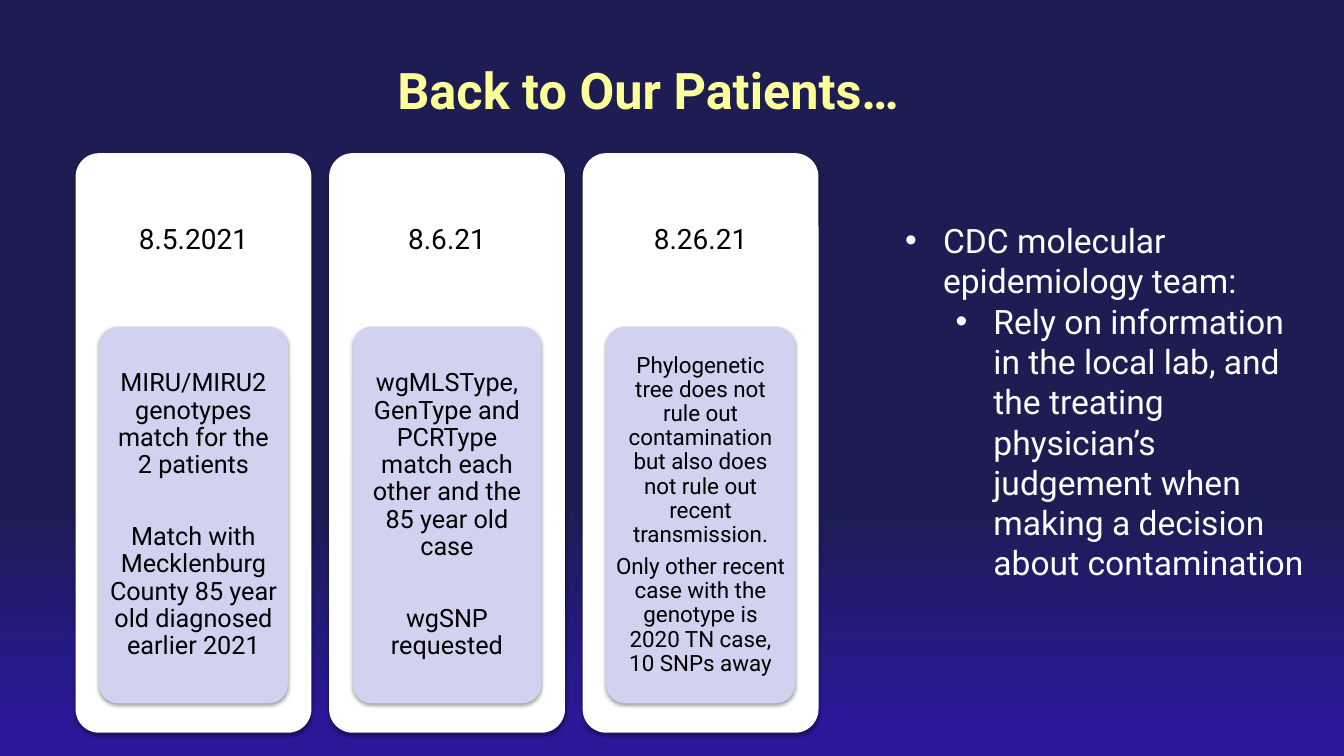
from lxml.etree import SubElement
from pptx import Presentation
from pptx.dml.color import RGBColor
from pptx.enum.shapes import MSO_SHAPE
from pptx.enum.text import MSO_ANCHOR, MSO_AUTO_SIZE, PP_ALIGN
from pptx.oxml.ns import qn
from pptx.util import Pt

NAVY = RGBColor(0x1D, 0x1D, 0x53)
VIOLET = RGBColor(0x2A, 0x18, 0x98)
YELLOW = RGBColor(0xFF, 0xFF, 0x99)
WHITE = RGBColor(0xFF, 0xFF, 0xFF)
LILAC = RGBColor(0xD1, 0xD1, 0xF0)
BLACK = RGBColor(0, 0, 0)
FONT = "Roboto"


def add_run(para, text, size, color, bold=False):
    run = para.add_run()
    run.text = text
    run.font.name = FONT
    run.font.size = Pt(size)
    run.font.bold = bold
    run.font.color.rgb = color


def add_card(left, top, width, height, fill, margins, texts, size, gap):
    card = slide.shapes.add_shape(MSO_SHAPE.ROUNDED_RECTANGLE, Pt(left), Pt(top), Pt(width), Pt(height))
    card.adjustments[0] = 0.1
    card.fill.solid()
    card.fill.fore_color.rgb = fill
    card.line.fill.background()

    # Soft shadow below the card
    card.shadow.inherit = False
    effects = card._element.spPr.find(qn("a:effectLst"))
    shade = SubElement(effects, qn("a:outerShdw"), blurRad=str(Pt(3.1)), dist=str(Pt(1.6)),
                       dir="5400000", rotWithShape="0")
    tint = SubElement(shade, qn("a:srgbClr"), val=str(BLACK))
    SubElement(tint, qn("a:alpha"), val="38000")

    # Centred text
    frame = card.text_frame
    frame.word_wrap = True
    frame.vertical_anchor = MSO_ANCHOR.MIDDLE
    side, upper, lower = margins
    frame.margin_left = frame.margin_right = Pt(side)
    frame.margin_top, frame.margin_bottom = Pt(upper), Pt(lower)
    for i, text in enumerate(texts):
        para = frame.add_paragraph() if i else frame.paragraphs[0]
        para.alignment = PP_ALIGN.CENTER
        para.line_spacing = 0.9
        para.space_before = Pt(gap if i else 0)
        add_run(para, text, size, BLACK)


deck = Presentation()
deck.slide_width, deck.slide_height = Pt(960), Pt(540)
slide = deck.slides.add_slide(deck.slide_layouts[1])

# Background
back = slide.background.fill
back.gradient()
back.gradient_angle = 270
for stop, place, color in zip(back.gradient_stops, (0.67, 0.95), (NAVY, VIOLET)):
    stop.position = place
    stop.color.rgb = color

# Title
title = slide.shapes.title
title.left, title.top, title.width, title.height = Pt(54), Pt(23), Pt(818), Pt(66)
title.text_frame.vertical_anchor = MSO_ANCHOR.BOTTOM
head = title.text_frame.paragraphs[0]
head.alignment = PP_ALIGN.CENTER
add_run(head, "Back to Our Patients…", 36, YELLOW, True)

# Dated cards: date, findings, text size, paragraph gap
cards = [
    ("8.5.2021", ["MIRU/MIRU2 genotypes match for the 2 patients",
                  "Match with Mecklenburg County 85 year old diagnosed earlier 2021"], 18, 32),
    ("8.6.21", ["wgMLSType, GenType and PCRType match each other and the 85 year old case",
                "wgSNP requested"], 18, 32),
    ("8.26.21", ["Phylogenetic tree does not rule out contamination but also does not "
                 "rule out recent transmission.",
                 "Only other recent case with the genotype is 2020 TN case, 10 SNPs away"], 16, 5.6),
]
for i, (date, notes, size, gap) in enumerate(cards):
    left = 54 + 181.1 * i
    add_card(left, 109.4, 168.5, 414, WHITE, (1, 1, 290), [date], 20, 0)
    add_card(left + 16.8, 233.4, 134.8, 269, LILAC, (3, 3, 3), notes, size, gap)

# Bulleted list
body = slide.placeholders[1]
body.left, body.top, body.width, body.height = Pt(639.4), Pt(153.4), Pt(300.2), Pt(327)
frame = body.text_frame
frame.auto_size = MSO_AUTO_SIZE.NONE
points = [
    ("CDC molecular epidemiology team:", 27),
    ("Rely on information in the local lab, and the treating physician’s judgement "
     "when making a decision about contamination", 63),
]
for level, (text, indent) in enumerate(points):
    para = frame.add_paragraph() if level else frame.paragraphs[0]
    para.level = level
    para.space_before = Pt(0)
    props = para._p.get_or_add_pPr()
    props.set("marL", str(Pt(indent)))
    props.set("indent", str(Pt(-27)))
    SubElement(props, qn("a:buChar"), char="•")
    add_run(para, text, 24, WHITE)

deck.save("out.pptx")
